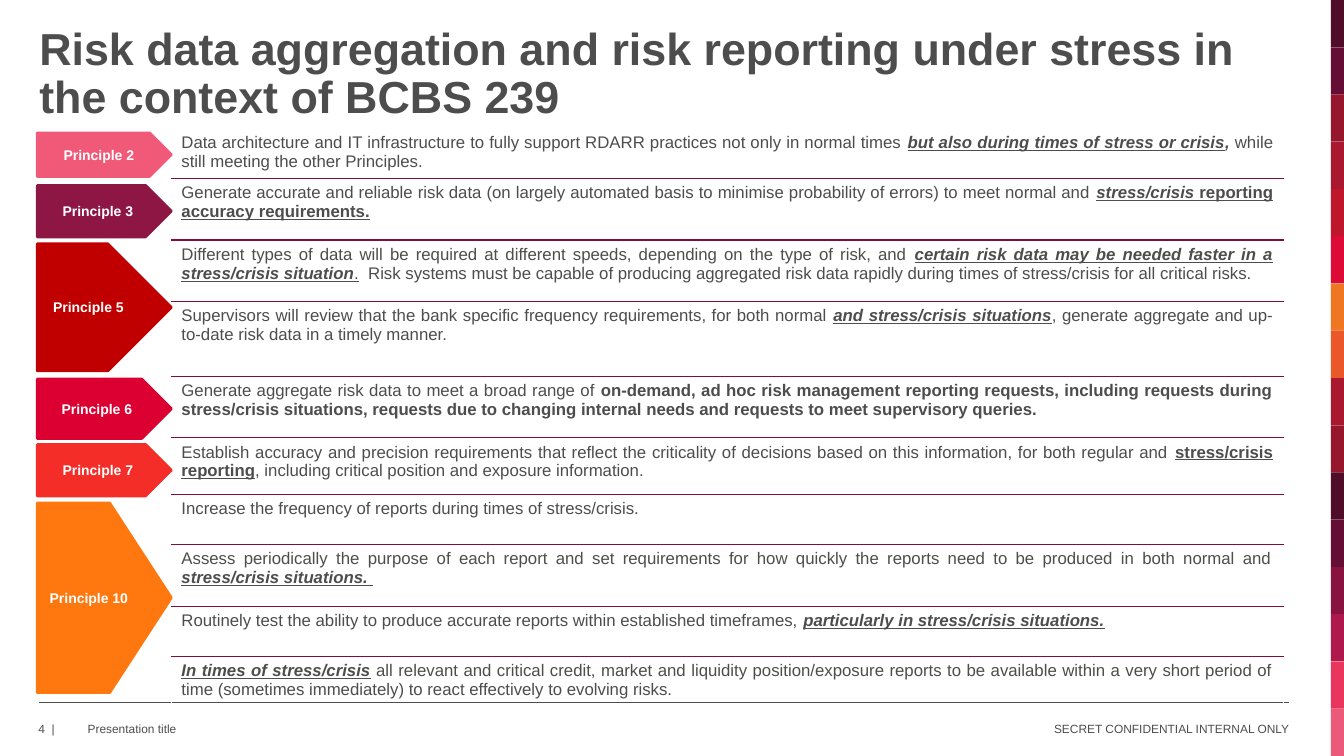
from lxml import etree
from pptx import Presentation
from pptx.dml.color import RGBColor
from pptx.enum.shapes import MSO_CONNECTOR, MSO_SHAPE
from pptx.enum.text import MSO_ANCHOR, PP_ALIGN
from pptx.oxml.ns import qn
from pptx.util import Pt

LEFT, CENTER, RIGHT, JUSTIFY = PP_ALIGN.LEFT, PP_ALIGN.CENTER, PP_ALIGN.RIGHT, PP_ALIGN.JUSTIFY
TOP, MIDDLE, BOTTOM = MSO_ANCHOR.TOP, MSO_ANCHOR.MIDDLE, MSO_ANCHOR.BOTTOM
PENTAGON, RECTANGLE = MSO_SHAPE.PENTAGON, MSO_SHAPE.RECTANGLE
STRAIGHT = MSO_CONNECTOR.STRAIGHT

FONT = "Arial"
GREY = RGBColor(0x4D, 0x4D, 0x4D)
WHITE = RGBColor(0xFF, 0xFF, 0xFF)
RULE_HEX = "870A3C"

# Content
TITLE = "Risk data aggregation and risk reporting under stress in the context of BCBS 239"
# Footer: text, left, width, alignment
FOOTER = [
    ("4  |", 27.4, 31.7, LEFT),
    ("Presentation title", 62.6, 396.7, LEFT),
    ("SECRET CONFIDENTIAL INTERNAL ONLY", 524.2, 396.7, RIGHT),
]
# Arrows: label, top, height, colour, point depth
PRINCIPLES = [
    ("Principle 2", 95, 31, RGBColor(0xF0, 0x5A, 0x78), 0.5),
    ("Principle 3", 132.5, 36.7, RGBColor(0x8D, 0x16, 0x45), 0.5),
    ("Principle 5", 174.2, 90.7, RGBColor(0xC0, 0x00, 0x00), 0.5),
    ("Principle 6", 270.7, 42.5, RGBColor(0xDC, 0x00, 0x32), 0.5),
    ("Principle 7", 317.5, 36.7, RGBColor(0xF5, 0x2D, 0x28), 0.5),
    ("Principle 10", 359.3, 135.4, RGBColor(0xFF, 0x78, 0x0F), 0.46),
]
# Table rows: height, then runs of (text, style letters b, i, u)
REQUIREMENTS = [
    (36, [("Data architecture and IT infrastructure to fully support RDARR practices "
           "not only in normal times ", ""),
          ("but also during times of stress or crisis", "biu"), (", ", "bi"),
          ("while still meeting the other Principles.", "")]),
    (44, [("Generate accurate and reliable risk data (on largely automated basis to minimise "
           "probability of errors) to meet normal and ", ""),
          ("stress/crisis", "biu"), (" reporting accuracy requirements.", "bu")]),
    (44, [("Different types of data will be required at different speeds, depending on the "
           "type of risk, and ", ""),
          ("certain risk data may be needed faster in a stress/crisis situation", "biu"),
          (".", "u"),
          ("  Risk systems must be capable of producing aggregated risk data rapidly during "
           "times of stress/crisis for all critical risks.", "")]),
    (53.3, [("Supervisors will review that the bank specific frequency requirements, for both "
             "normal ", ""),
            ("and stress/crisis situations", "biu"),
            (", generate aggregate and up-to-date risk data in a timely manner.", "")]),
    (44, [("Generate aggregate risk data to meet a broad range of ", ""),
          ("on-demand, ad hoc risk management reporting requests, including requests during "
           "stress/crisis situations, requests due to changing internal needs and requests to "
           "meet supervisory queries.", "b")]),
    (40.3, [("Establish accuracy and precision requirements that reflect the criticality of "
             "decisions based on this information, for both regular and ", ""),
            ("stress/crisis reporting", "bu"),
            (", including critical position and exposure information.", "")]),
    (36, [("Increase the frequency of reports during times of stress/crisis.", "")]),
    (44, [("Assess periodically the purpose of each report and set requirements for how quickly "
           "the reports need to be produced in both normal and ", ""),
          ("stress/crisis situations. ", "biu")]),
    (36, [("Routinely test the ability to produce accurate reports within established "
           "timeframes, ", ""),
          ("particularly in stress/crisis situations.", "biu")]),
    (44, [("In times of stress/crisis", "biu"),
          (" all relevant and critical credit, market and liquidity position/exposure reports "
           "to be available within a very short period of time (sometimes immediately) to react "
           "effectively to evolving risks.", "")]),
]
STRIP = ["500D29", "650E35", "96172B", "AA1830", "BE172B", "DC0A34", "EF7721", "EA5728",
         "AA1830", "96172B", "500D29", "650E35", "88133E", "AF184C", "E8365C", "EB5A79"]

# Layout
SLIDE_W, SLIDE_H = 960, 540
STRIP_X = 950.6
ARROW_X, ARROW_W = 26.6, 95.8
TABLE_X, TABLE_Y, TABLE_W = 122.4, 91.4, 794.2
RULE_Y = 501.8


def write(tf, runs, size=12, color=GREY, align=LEFT, spacing=None):
    """Fill the first paragraph of a text frame with (text, style) runs."""
    tf.word_wrap = True
    p = tf.paragraphs[0]
    p.alignment = align
    if spacing:
        p.line_spacing = spacing
    for text, style in runs:
        r = p.add_run()
        r.text = text
        r.font.name, r.font.size = FONT, Pt(size)
        r.font.color.rgb = color
        r.font.bold, r.font.italic, r.font.underline = ("b" in style, "i" in style, "u" in style)


def add_text(box, runs, anchor=MIDDLE, margins=(0, 0, 0, 0), **fmt):
    tf = slide.shapes.add_textbox(*map(Pt, box)).text_frame
    tf.margin_left, tf.margin_top, tf.margin_right, tf.margin_bottom = map(Pt, margins)
    tf.vertical_anchor = anchor
    write(tf, runs, **fmt)


def add_block(kind, box, color, line_width=0):
    sp = slide.shapes.add_shape(kind, *map(Pt, box))
    sp.shadow.inherit = False
    sp.fill.solid()
    sp.fill.fore_color.rgb = color
    if line_width:
        sp.line.color.rgb = color
        sp.line.width = Pt(line_width)
    else:
        sp.line.fill.background()
    return sp


def add_border(cell, side):
    tc_pr = cell._tc.get_or_add_tcPr()
    ln = etree.Element(qn("a:" + side), w=str(Pt(1)))
    fill = etree.SubElement(ln, qn("a:solidFill"))
    etree.SubElement(fill, qn("a:srgbClr"), val=RULE_HEX)
    borders = [e for e in tc_pr if e.tag in (qn("a:lnT"), qn("a:lnB"))]
    tc_pr.insert(len(borders), ln)


prs = Presentation()
prs.slide_width, prs.slide_height = Pt(SLIDE_W), Pt(SLIDE_H)
slide = prs.slides.add_slide(prs.slide_layouts[6])

# Colour strip on the right edge
step = SLIDE_H / len(STRIP)
for i, color in enumerate(STRIP):
    add_block(RECTANGLE, (STRIP_X, i * step, SLIDE_W - STRIP_X, step), RGBColor.from_string(color))

# Footer
for text, x, w, align in FOOTER:
    add_text((x, 514.8, w, 12.2), [(text, "")], size=8.5, align=align)
rule = slide.shapes.add_connector(STRAIGHT, Pt(28.1), Pt(RULE_Y), Pt(920.9), Pt(RULE_Y))
rule.line.color.rgb = GREY
rule.line.width = Pt(1)
etree.SubElement(rule._element.spPr, qn("a:effectLst"))

# Title
add_text((28.1, 35.3, 892.8, 56.2), [(TITLE, "b")], anchor=BOTTOM,
         margins=(0, 3.6, 7.2, 3.6), size=32, spacing=0.9)

# Requirements table, ruled between rows only
count = len(REQUIREMENTS)
table_h = sum(h for h, _ in REQUIREMENTS)
table = slide.shapes.add_table(count, 1, Pt(TABLE_X), Pt(TABLE_Y), Pt(TABLE_W), Pt(table_h)).table
table.first_row = table.horz_banding = False
for i, (h, runs) in enumerate(REQUIREMENTS):
    table.rows[i].height = Pt(h)
    cell = table.cell(i, 0)
    cell.vertical_anchor = TOP
    cell.fill.background()
    write(cell.text_frame, runs, align=JUSTIFY)
    if i > 0:
        add_border(cell, "lnT")
    if i < count - 1:
        add_border(cell, "lnB")

# Principle arrows
for label, y, h, color, depth in PRINCIPLES:
    sp = add_block(PENTAGON, (ARROW_X, y, ARROW_W, h), color, line_width=2)
    sp.adjustments[0] = depth
    sp.text_frame.vertical_anchor = MIDDLE
    write(sp.text_frame, [(label, "b")], size=10, color=WHITE, align=CENTER)

prs.save("out.pptx")
